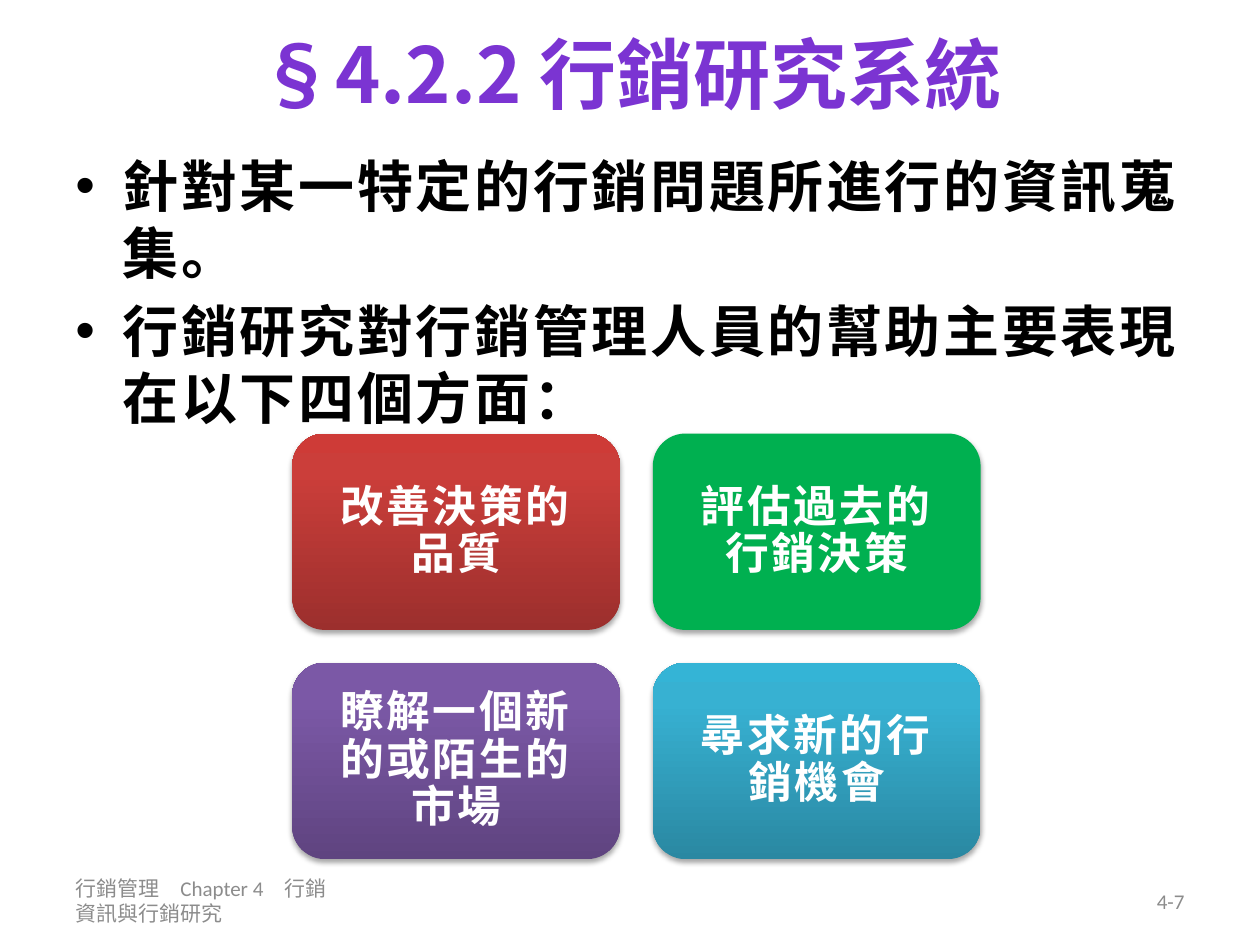
from lxml.etree import SubElement
from pptx import Presentation
from pptx.dml.color import RGBColor
from pptx.enum.shapes import MSO_SHAPE
from pptx.enum.text import MSO_ANCHOR, PP_ALIGN
from pptx.oxml import parse_xml
from pptx.oxml.ns import nsdecls, qn
from pptx.util import Cm, Pt

CJK = "Noto Sans CJK SC"
LATIN = "Calibri"
PURPLE = RGBColor(0x7B, 0x34, 0xD2)
BLACK = RGBColor(0, 0, 0)
WHITE = RGBColor(0xFF, 0xFF, 0xFF)
GRAY = RGBColor(0x8C, 0x8C, 0x8C)
GREEN = RGBColor(0x00, 0xB0, 0x50)
REDS = (RGBColor(0x9C, 0x2F, 0x2D), RGBColor(0xCB, 0x3E, 0x3A), RGBColor(0xCE, 0x3B, 0x37))
VIOLETS = (RGBColor(0x5F, 0x44, 0x80), RGBColor(0x7B, 0x58, 0xA6), RGBColor(0x7C, 0x57, 0xA8))
BLUES = (RGBColor(0x2A, 0x88, 0xA2), RGBColor(0x37, 0xB1, 0xD2), RGBColor(0x34, 0xB4, 0xD6))
STOPS = (0, 80, 100)


def style(paragraph, size, color, name=CJK, bold=False, spacing=0):
    font = paragraph.font
    font.size, font.bold, font.name = Pt(size), bold, name
    font.color.rgb = color
    properties = paragraph._p.pPr.find(qn("a:defRPr"))
    SubElement(properties, qn("a:ea")).set("typeface", CJK)
    if spacing:
        properties.set("spc", str(int(spacing * 100)))


def add_text(slide, box, text, align, anchor=MSO_ANCHOR.MIDDLE, **font):
    frame = slide.shapes.add_textbox(*box).text_frame
    frame.word_wrap = True
    frame.vertical_anchor = anchor
    paragraph = frame.paragraphs[0]
    paragraph.text = text
    paragraph.alignment = align
    style(paragraph, **font)


def add_bullets(slide, box, lines):
    frame = slide.shapes.add_textbox(*box).text_frame
    frame.word_wrap = True
    for index, line in enumerate(lines):
        paragraph = frame.add_paragraph() if index else frame.paragraphs[0]
        paragraph.text = line
        if index:
            paragraph.space_before = Pt(6.4)
        properties = paragraph._p.get_or_add_pPr()
        properties.set("marL", str(Cm(0.95)))
        properties.set("indent", str(-Cm(0.95)))
        SubElement(properties, qn("a:buFont")).set("typeface", "Arial")
        SubElement(properties, qn("a:buChar")).set("char", "•")
        style(paragraph, 32, BLACK, bold=True, spacing=1.5)


def fill_gradient(shape, colors):
    stops = "".join(
        f'<a:gs pos="{stop * 1000}"><a:srgbClr val="{color}"/></a:gs>'
        for stop, color in zip(STOPS, colors)
    )
    gradient = parse_xml(
        f'<a:gradFill {nsdecls("a")} rotWithShape="1"><a:gsLst>{stops}</a:gsLst>'
        '<a:lin ang="16200000" scaled="0"/></a:gradFill>'
    )
    shape._element.spPr.find(qn("a:prstGeom")).addnext(gradient)


def add_shadow(shape):
    shape.shadow.inherit = False
    effects = shape._element.spPr.find(qn("a:effectLst"))
    effects.append(parse_xml(
        f'<a:outerShdw {nsdecls("a")} blurRad="{Pt(3.1)}" dist="{Pt(1.8)}" dir="5400000" '
        'rotWithShape="0"><a:srgbClr val="000000"><a:alpha val="35000"/></a:srgbClr></a:outerShdw>'
    ))


def add_card(slide, box, text, fill):
    shape = slide.shapes.add_shape(MSO_SHAPE.ROUNDED_RECTANGLE, *box)
    shape.line.fill.background()
    if isinstance(fill, RGBColor):
        shape.fill.solid()
        shape.fill.fore_color.rgb = fill
    else:
        fill_gradient(shape, fill)
    add_shadow(shape)
    frame = shape.text_frame
    frame.word_wrap = True
    frame.vertical_anchor = MSO_ANCHOR.MIDDLE
    frame.margin_left = frame.margin_right = Cm(0.45)
    frame.margin_top = frame.margin_bottom = Cm(0.45)
    paragraph = frame.paragraphs[0]
    paragraph.text = text
    paragraph.alignment = PP_ALIGN.CENTER
    paragraph.line_spacing = 0.9
    style(paragraph, 25, WHITE, bold=True, spacing=1.5)


def add_card_grid(slide, box, cards, columns=2, gap=Cm(0.66)):
    left, top, width, height = box
    rows = len(cards) // columns
    card_width = (width - gap * (columns - 1)) // columns
    card_height = (height - gap * (rows - 1)) // rows
    for index, (text, fill) in enumerate(cards):
        row, column = divmod(index, columns)
        x = left + column * (card_width + gap)
        y = top + row * (card_height + gap)
        add_card(slide, (x, y, card_width, card_height), text, fill)


def add_footer(slide, box):
    left, top, width, height = box
    part = Cm(5.93)
    font = {"size": 12, "color": GRAY, "name": LATIN}
    add_text(slide, (left, top, part, height), "行銷管理　Chapter 4　行銷資訊與行銷研究",
             PP_ALIGN.LEFT, **font)
    add_text(slide, (left + width - part, top, part, height), "4-7", PP_ALIGN.RIGHT, **font)


def main():
    presentation = Presentation()
    presentation.slide_width, presentation.slide_height = Cm(25.4), Cm(19.05)
    slide = presentation.slides.add_slide(presentation.slide_layouts[6])
    left, width = Cm(1.27), Cm(22.86)
    add_text(slide, (left, 0, width, Cm(2.92)), "§4.2.2 行銷研究系統",
             PP_ALIGN.CENTER, size=44, color=PURPLE, bold=True)
    add_bullets(slide, (left, Cm(2.92), width, Cm(6.6)), (
        "針對某一特定的行銷問題所進行的資訊蒐集。",
        "行銷研究對行銷管理人員的幫助主要表現在以下四個方面：",
    ))
    add_card_grid(slide, (Cm(5.89), Cm(8.74), Cm(13.88), Cm(8.58)), (
        ("改善決策的品質", REDS),
        ("評估過去的行銷決策", GREEN),
        ("瞭解一個新的或陌生的市場", VIOLETS),
        ("尋求新的行銷機會", BLUES),
    ))
    add_footer(slide, (left, Cm(17.65), width, Cm(1.02)))
    presentation.save("out.pptx")


if __name__ == "__main__":
    main()
